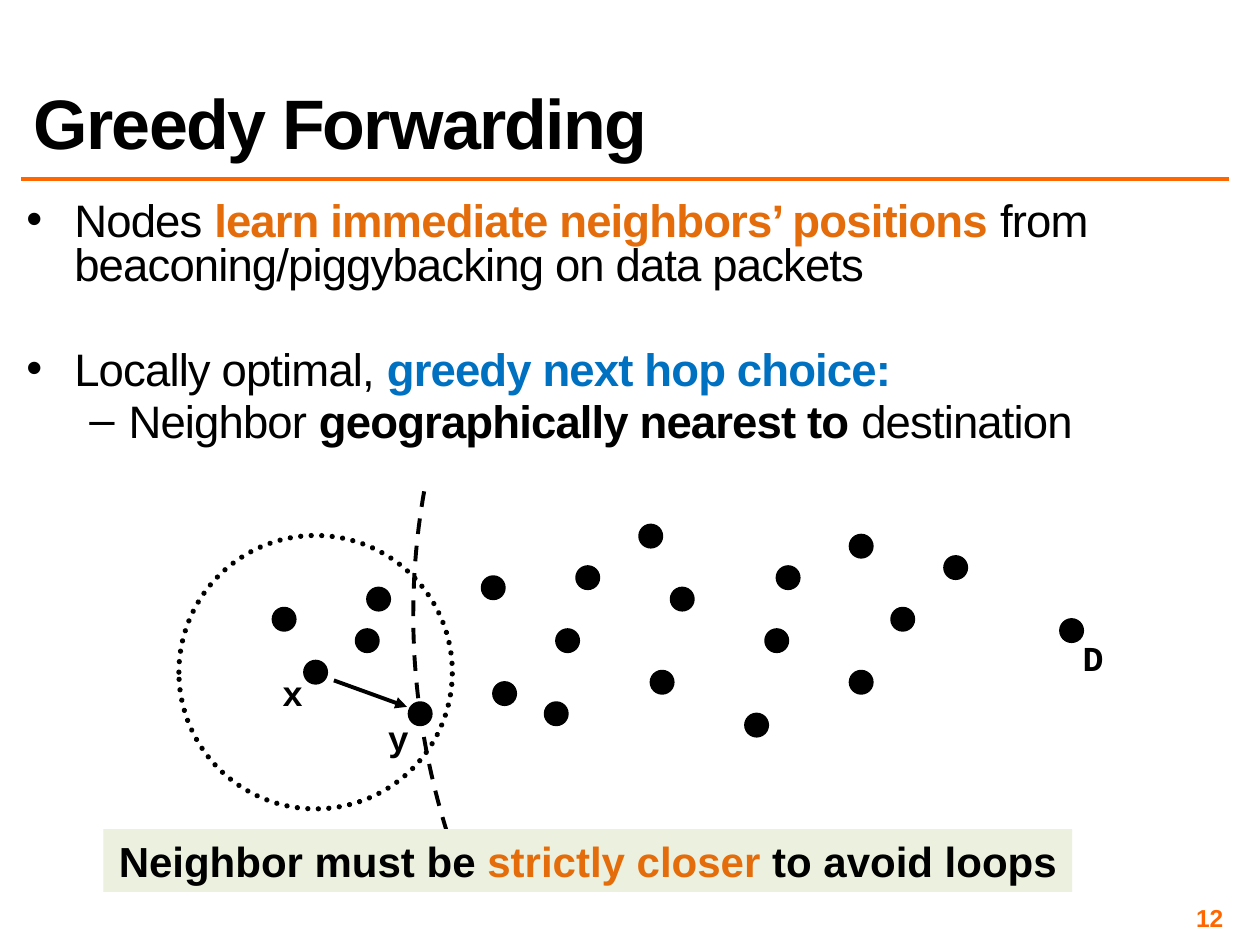
from lxml.etree import SubElement
from pptx import Presentation
from pptx.dml.color import RGBColor
from pptx.enum.dml import MSO_LINE
from pptx.enum.shapes import MSO_CONNECTOR as LINK, MSO_SHAPE as SHAPE
from pptx.enum.text import MSO_ANCHOR as ANCHOR, PP_ALIGN as ALIGN
from pptx.oxml.ns import qn
from pptx.util import Inches, Pt

"""Build the greedy forwarding slide."""

HUES = {"ink": "000000", "rule": "FF6600", "warm": "E46C0A",
        "blue": "0070C0", "pale": "EBF1DE"}
DOT = 0.17
NODES = [(2.92, 4.67), (2.17, 4.83), (2.42, 5.25), (2.83, 5), (5.33, 4.67),
         (3.25, 5.58), (4.58, 4.5), (6.08, 5), (6.75, 4.25), (7.08, 4.83),
         (6.17, 4.5), (5.08, 4.17), (8.42, 4.92), (6.75, 5.33), (4.42, 5),
         (3.83, 4.58), (4.33, 5.58), (5.17, 5.33), (7.5, 4.42),
         (3.92, 5.42), (5.92, 5.67)]
NAMES = [("D", 8.48, 5, 0.39), ("x", 2.14, 5.28, 0.35), ("y", 2.98, 5.64, 0.35)]
POINTS = [
    (0, 5, [("Nodes ", "ink", False),
            ("learn immediate neighbors’ positions ", "warm", True),
            ("from beaconing/piggybacking on data packets", "ink", False)]),
    (0, 35, [("Locally optimal, ", "ink", False),
             ("greedy next hop choice:", "blue", True)]),
    (1, 5, [("Neighbor ", "ink", False),
            ("geographically nearest to ", "ink", True),
            ("destination", "ink", False)])]
LEVELS = [("•", 0.38, -0.38), ("–", 0.81, -0.31)]


def color(name):
    return RGBColor.from_string(HUES[name])


def add_run(para, text, size, hue="ink", bold=True, face="Arial", track=0):
    run = para.add_run()
    run.text = text
    font = run.font
    font.size, font.bold, font.name = Pt(size), bold, face
    font.color.rgb = color(hue)
    if track:
        run._r.get_or_add_rPr().set("spc", str(int(track * 100)))


def add_text(slide, box, anchor=ANCHOR.TOP, inset=None, wrap=True):
    frame = slide.shapes.add_textbox(*map(Inches, box)).text_frame
    frame.word_wrap = wrap
    frame.vertical_anchor = anchor
    if inset is not None:
        frame.margin_left = frame.margin_right = Inches(inset)
        frame.margin_top = frame.margin_bottom = Inches(inset)
    return frame


def add_bullet(para, level):
    mark, left, hang = LEVELS[level]
    para.level = level
    props = para._p.get_or_add_pPr()
    props.set("marL", str(Inches(left)))
    props.set("indent", str(Inches(hang)))
    SubElement(props, qn("a:buFont")).set("typeface", "Arial")
    SubElement(props, qn("a:buChar")).set("char", mark)


def add_points(slide):
    frame = add_text(slide, (0.17, 1.57, 9.58, 2.13), inset=0.04)
    for i, (level, gap, runs) in enumerate(POINTS):
        para = frame.add_paragraph() if i else frame.paragraphs[0]
        para.line_spacing = 0.8
        para.space_before = Pt(gap)
        add_bullet(para, level)
        for text, hue, bold in runs:
            add_run(para, text, 26, hue, bold, track=-0.5)


def set_line(shape, width, hue="ink", dash=None):
    shape.line.color.rgb = color(hue)
    shape.line.width = Pt(width)
    if dash:
        shape.line.dash_style = dash


def add_shape(slide, kind, box, fill=None):
    shape = slide.shapes.add_shape(kind, *map(Inches, box))
    shape.shadow.inherit = False
    if fill:
        shape.fill.solid()
        shape.fill.fore_color.rgb = color(fill)
    else:
        shape.fill.background()
    return shape


def add_line(slide, ends, width, hue="ink", arrow=False):
    line = slide.shapes.add_connector(LINK.STRAIGHT, *map(Inches, ends))
    set_line(line, width, hue)
    SubElement(line._element.spPr, qn("a:effectLst"))
    if arrow:
        SubElement(line.line._get_or_add_ln(), qn("a:tailEnd")).set("type", "triangle")


def add_arc(slide):
    top, end, steps = 3.9, 6.7, 40
    rows = [top + (end - top) * i / steps for i in range(steps + 1)]
    spots = [(Inches(3.28 + 0.09 * (y - 4.88) ** 2), Inches(y)) for y in rows]
    pen = slide.shapes.build_freeform(*spots[0])
    pen.add_line_segments(spots[:0:-1][::-1], close=False)
    arc = pen.convert_to_shape()
    arc.shadow.inherit = False
    arc.fill.background()
    set_line(arc, 2.25, dash=MSO_LINE.DASH)


def add_graph(slide):
    for x, y in NODES:
        set_line(add_shape(slide, SHAPE.OVAL, (x, y, DOT, DOT), "ink"), 2)
    ring = add_shape(slide, SHAPE.OVAL, (1.42, 4.25, 2.17, 2.17))
    set_line(ring, 3, dash=MSO_LINE.ROUND_DOT)
    ring.line._get_or_add_ln().set("cap", "rnd")
    add_arc(slide)
    for name, x, y, wide in NAMES:
        para = add_text(slide, (x, y, wide, 0.4), wrap=False).paragraphs[0]
        para.alignment = ALIGN.CENTER
        add_run(para, name, 20, face="Courier New")
    add_line(slide, (2.65, 5.4, 3.23, 5.61), 2.25, arrow=True)


def add_banner(slide):
    box = add_shape(slide, SHAPE.RECTANGLE, (0.82, 6.58, 7.69, 0.5), "pale")
    box.line.fill.background()
    box.text_frame.vertical_anchor = ANCHOR.TOP
    para = box.text_frame.paragraphs[0]
    para.alignment = ALIGN.CENTER
    add_run(para, "Neighbor must be ", 24)
    add_run(para, "strictly closer ", 24, "warm")
    add_run(para, "to avoid loops", 24)


def main():
    deck = Presentation()
    deck.slide_width, deck.slide_height = Inches(10), Inches(7.5)
    slide = deck.slides.add_slide(deck.slide_layouts[6])
    add_line(slide, (0.17, 1.42, 9.75, 1.42), 2, "rule")
    title = add_text(slide, (0.17, 0.17, 9.58, 1.17), ANCHOR.BOTTOM).paragraphs[0]
    title.line_spacing = 0.8
    add_run(title, "Greedy Forwarding", 40, track=-1)
    add_points(slide)
    add_graph(slide)
    add_banner(slide)
    page = add_text(slide, (7.42, 7.17, 2.33, 0.23), ANCHOR.MIDDLE, 0.04).paragraphs[0]
    page.alignment = ALIGN.RIGHT
    add_run(page, "12", 14, "rule")
    deck.save("out.pptx")


if __name__ == "__main__":
    main()
